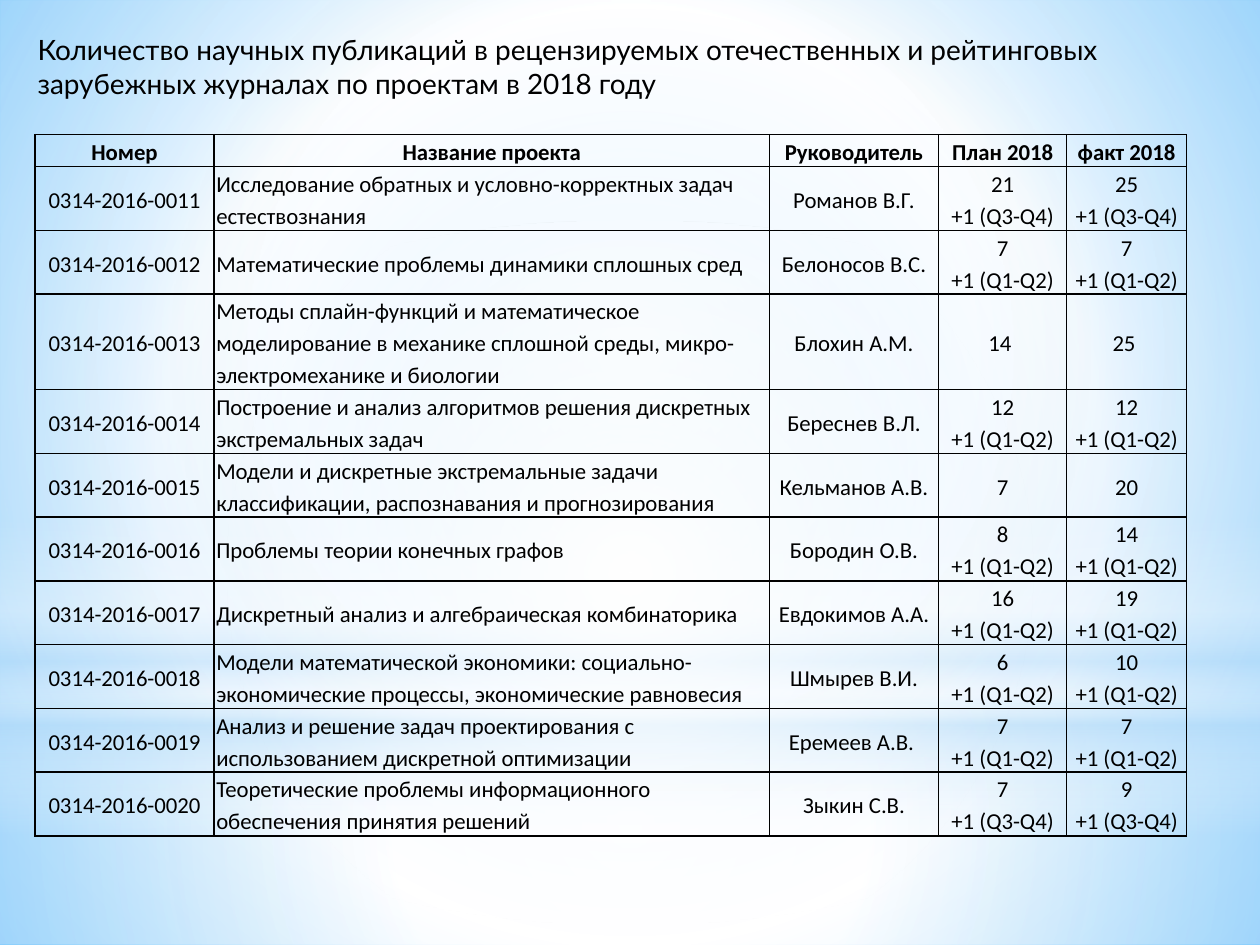
"""Build a slide with a table of journal publications by project in 2018."""
from lxml.etree import SubElement
from pptx import Presentation
from pptx.dml.color import RGBColor
from pptx.enum.shapes import MSO_SHAPE
from pptx.enum.text import MSO_ANCHOR, PP_ALIGN
from pptx.oxml import parse_xml
from pptx.oxml.ns import qn
from pptx.util import Pt

NS = 'xmlns:a="http://schemas.openxmlformats.org/drawingml/2006/main"'


def paint(fill, root, stops, angle=None):
    fill.gradient()
    grad = root.find(".//" + qn("a:gradFill"))
    for child in list(grad):
        grad.remove(child)
    group = SubElement(grad, qn("a:gsLst"))
    for place, color, alpha in stops:
        stop = SubElement(group, qn("a:gs"), pos=str(place * 1000))
        tone = SubElement(stop, qn("a:srgbClr"), val=color)
        if alpha < 100:
            SubElement(tone, qn("a:alpha"), val=str(alpha * 1000))
    if angle is None:
        ring = SubElement(grad, qn("a:path"), path="circle")
        SubElement(ring, qn("a:fillToRect"), l="50000", t="50000", r="50000", b="50000")
    else:
        SubElement(grad, qn("a:lin"), ang=str(angle * 60000), scaled="0")


def write(par, text, size, font, bold=False):
    run = par.add_run()
    run.text = text
    run.font.size = Pt(size)
    run.font.name = font
    run.font.bold = bold
    run.font.color.rgb = RGBColor.from_string("000000")


deck = Presentation()
deck.slide_width, deck.slide_height = Pt(720), Pt(540)
slide = deck.slides.add_slide(deck.slide_layouts[6])
paint(slide.background.fill, slide.element,
      [(0, "99D4FE", 100), (60, "FFFFFF", 100), (100, "54BDFF", 100)])

layers = [
    (MSO_SHAPE.RECTANGLE, 402, 138, None,
     [(0, "FFFFFF", 90), (37, "FFFFFF", 75), (100, "B4DCFA", 78)]),
    (MSO_SHAPE.RECTANGLE, 0, 402, None,
     [(0, "FFFFFF", 88), (48, "FFFFFF", 61), (100, "B4DCFA", 78)]),
    (MSO_SHAPE.RECTANGLE, 297, 180, 90,
     [(0, "FFFFFF", 0), (29, "FFFFFF", 29), (45, "B4DCFA", 40),
      (55, "FFFFFF", 25), (65, "B4DCFA", 60), (100, "FFFFFF", 0)]),
    (MSO_SHAPE.OVAL, 126, 402, None,
     [(0, "FFFFFF", 100), (56, "FFFFFF", 0), (100, "FFFFFF", 0)]),
]
for kind, top, height, angle, stops in layers:
    layer = slide.shapes.add_shape(kind, 0, Pt(top), Pt(720), Pt(height))
    layer.shadow.inherit = False
    layer.line.fill.background()
    paint(layer.fill, layer.element, stops, angle)

works = [
    ("Исследование обратных и условно-корректных задач естествознания",
     "Романов В.Г.", "21", "25", "Q3-Q4"),
    ("Математические проблемы динамики сплошных сред",
     "Белоносов В.С.", "7", "7", "Q1-Q2"),
    ("Методы сплайн-функций и математическое моделирование в механике "
     "сплошной среды, микро-электромеханике и биологии",
     "Блохин А.М.", "14 ", "25 ", ""),
    ("Построение и анализ алгоритмов решения дискретных экстремальных задач",
     "Береснев В.Л.", "12", "12", "Q1-Q2"),
    ("Модели и дискретные экстремальные задачи классификации, "
     "распознавания и прогнозирования",
     "Кельманов А.В.", "7", "20", ""),
    ("Проблемы теории конечных графов",
     "Бородин О.В.", "8", "14", "Q1-Q2"),
    ("Дискретный анализ и алгебраическая комбинаторика",
     "Евдокимов А.А.", "16", "19", "Q1-Q2"),
    ("Модели математической экономики: социально-экономические процессы, "
     "экономические равновесия",
     "Шмырев В.И.", "6", "10", "Q1-Q2"),
    ("Анализ и решение задач проектирования с использованием "
     "дискретной оптимизации",
     "Еремеев А.В. ", "7", "7", "Q1-Q2"),
    ("Теоретические проблемы информационного обеспечения принятия решений",
     "Зыкин С.В.", "7", "9", "Q3-Q4"),
]
rows = [[["Номер"], ["Название проекта"], ["Руководитель"], ["План 2018"], ["факт 2018"]]]
for num, (name, head, plan, fact, rank) in enumerate(works, 11):
    extra = [f"+1 ({rank})"] if rank else []
    rows.append([[f"0314-2016-00{num}"], [name], [head], [plan] + extra, [fact] + extra])

widths = [102.2, 317.5, 96.5, 73.4, 68.4]
frame = slide.shapes.add_table(len(rows), len(widths), Pt(20), Pt(77), Pt(658), Pt(110))
table = frame.table
table.first_row = table.horz_banding = False
for col, width in zip(table.columns, widths):
    col.width = Pt(width)
for r, row in enumerate(rows):
    table.rows[r].height = Pt(10)
    for c, lines in enumerate(row):
        cell = table.cell(r, c)
        cell.fill.background()
        cell.vertical_anchor = MSO_ANCHOR.MIDDLE
        cell.margin_left = cell.margin_right = Pt(1.4)
        cell.margin_top = cell.margin_bottom = 0
        props = cell._tc.get_or_add_tcPr()
        for i, side in enumerate("LRTB"):
            props.insert(i, parse_xml(
                f'<a:ln{side} {NS} w="12700"><a:solidFill><a:srgbClr val="000000"/>'
                f'</a:solidFill></a:ln{side}>'))
        for i, line in enumerate(lines):
            par = cell.text_frame.add_paragraph() if i else cell.text_frame.paragraphs[0]
            par.alignment = PP_ALIGN.LEFT if r and c == 1 else PP_ALIGN.CENTER
            par.line_spacing = 1.15
            write(par, line, 13, "Calibri", r == 0)
frame.height = Pt(394.5)

title = slide.shapes.add_textbox(Pt(14.4), Pt(15), Pt(686), Pt(46)).text_frame
title.word_wrap = True
write(title.paragraphs[0],
      "Количество научных публикаций в рецензируемых отечественных и рейтинговых "
      "зарубежных журналах по проектам в 2018 году", 16, "Lato")

deck.save("out.pptx")
